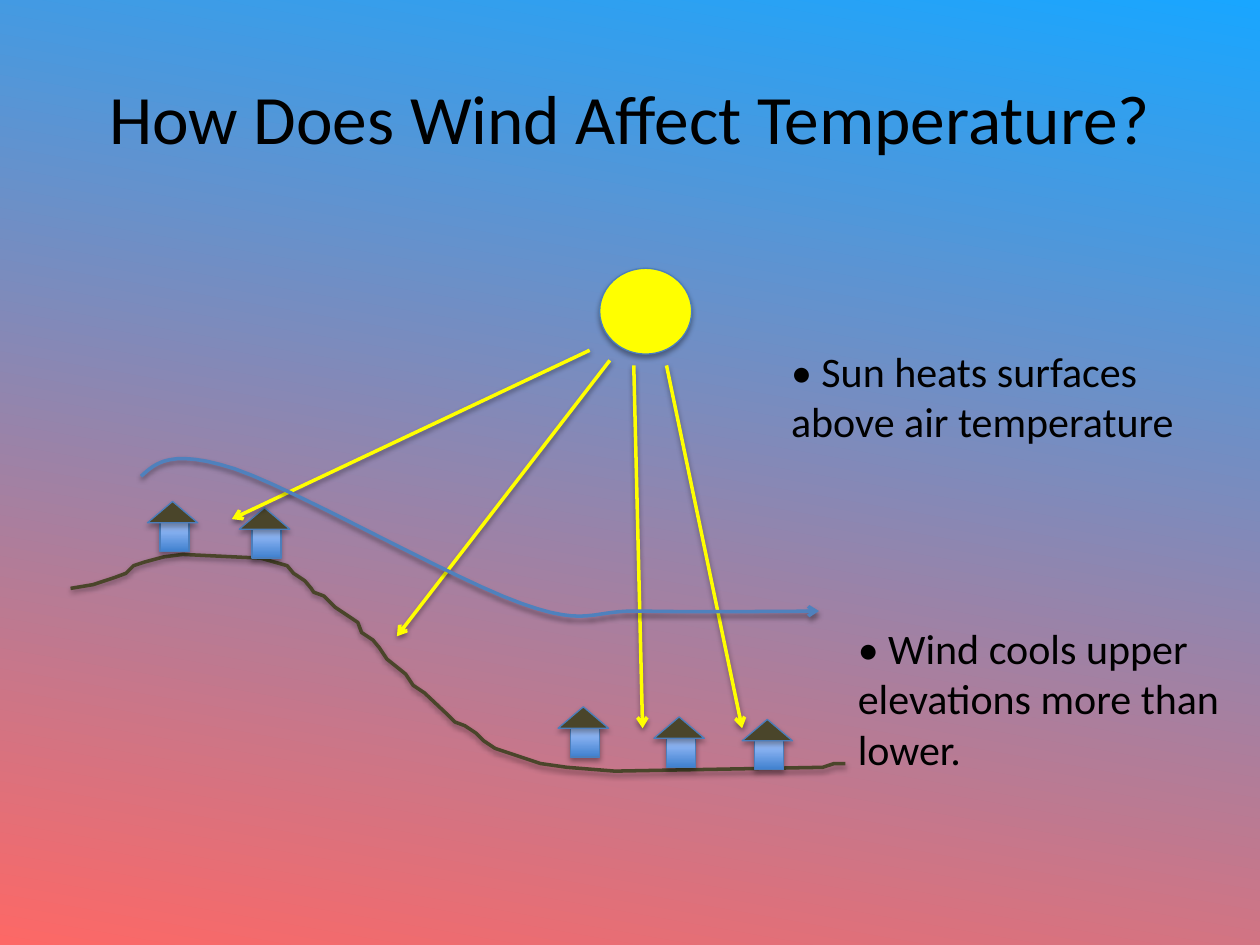
from lxml.etree import SubElement
from pptx import Presentation
from pptx.dml.color import RGBColor
from pptx.enum.shapes import MSO_CONNECTOR, MSO_SHAPE
from pptx.enum.text import MSO_ANCHOR, PP_ALIGN
from pptx.oxml.ns import qn
from pptx.util import Inches, Pt

COLS, ROWS = 100, 75
WIDE, HIGH = Inches(10), Inches(7.5)
INK = {"sky": "19A6FF", "warm": "FD6866", "sun": "FFFF00", "earth": "4A452A",
       "wind": "4F81BD", "edge": "4B7EBC", "low": "3F80CE", "high": "A4C4FF",
       "text": "000000"}
HOUSES = [(11.7, 39.8), (19, 40.3), (44.3, 56.1), (51.9, 56.9), (58.9, 57.1)]
RAYS = [((46.8, 27.8), (18.4, 41.2)), ((48.4, 28.6), (31.5, 50.5)),
        ((50.3, 29), (51, 57.8)), ((52.9, 29), (58.9, 57.8))]
NOTES = [("• Sun heats surfaces above air temperature", (61.8, 26.9, 32.9, 9.1)),
         ("• Wind cools upper elevations more than lower.", (67.1, 48.9, 30.7, 13.1))]
HILL = [(5.6, 46.7), (7.4, 46.4), (9.2, 45.8), (10, 45.5), (10.6, 44.9), (11.5, 44.6),
        (13, 44.2), (14.5, 44), (20.7, 44.3), (22.8, 44.9), (23.3, 45.5), (24.2, 46.1),
        (24.7, 46.7), (24.9, 47), (25.7, 47.3), (26.6, 48.2), (28.4, 49.4), (28.7, 50.2),
        (29.6, 50.8), (30.1, 51.4), (30.7, 52.3), (32.2, 53.5), (32.8, 54.4), (33.7, 55),
        (35.5, 56.7), (36.1, 57.3), (36.9, 57.6), (37.8, 58.2), (38.4, 58.8), (39.3, 59.4),
        (41.1, 60), (42.9, 60.6), (45, 60.9), (48.8, 61.2), (65.3, 60.9), (66.2, 60.6),
        (67.1, 60.6)]
WIND = [(11.2, 37.8), (12.4, 36.7), (13.6, 35.6), (18.6, 37.2), (23.6, 38.9),
        (36, 46), (41.4, 47.9), (46.7, 49.8), (46.9, 48.4), (50.8, 48.5),
        (54.8, 48.6), (65, 48.5), (65, 48.5)]


def grid(*vals):
    """Turn alternating columns and rows into slide lengths."""
    return [round(v * (HIGH / ROWS if i % 2 else WIDE / COLS)) for i, v in enumerate(vals)]


def hue(name):
    """Return the named colour."""
    return RGBColor.from_string(INK[name])


def blend(fill, names, angle):
    """Give a fill a two-stop gradient."""
    fill.gradient()
    fill.gradient_angle = angle
    for stop, name in zip(fill.gradient_stops, names):
        stop.color.rgb = hue(name)


def shade(shape, dist=1.8, alpha=35):
    """Drop a soft shadow straight below a shape."""
    box = SubElement(shape._element.spPr, qn("a:effectLst"))
    drop = SubElement(box, qn("a:outerShdw"), blurRad=str(Pt(3.1)),
                      dist=str(Pt(dist)), dir="5400000", rotWithShape="0")
    tint = SubElement(drop, qn("a:srgbClr"), val=INK["text"])
    SubElement(tint, qn("a:alpha"), val=str(alpha * 1000))


def stroke(shape, name, tip=False):
    """Style a drawn line, with an arrow tip on request."""
    shape.line.color.rgb = hue(name)
    shape.line.width = Pt(2)
    if tip:
        SubElement(shape.line._get_or_add_ln(), qn("a:tailEnd"), type="arrow")
    shade(shape, 1.6, 38)


def solid(shapes, kind, box, name=None):
    """Add an edged shape, filled plain or with the wall gradient."""
    shape = shapes.add_shape(kind, *grid(*box))
    if name:
        shape.fill.solid()
        shape.fill.fore_color.rgb = hue(name)
    else:
        blend(shape.fill, ("low", "high"), 90)
    shape.line.color.rgb = hue("edge")
    shape.line.width = Pt(0.75)
    shade(shape)


def house(shapes, left, top):
    """Group a wall and a roof."""
    parts = shapes.add_group_shape().shapes
    solid(parts, MSO_SHAPE.RECTANGLE, (left + 1, top + 1.7, 2.3, 2.3))
    solid(parts, MSO_SHAPE.ISOSCELES_TRIANGLE, (left, top, 4, 1.7), "earth")


def ray(shapes, start, end):
    """Add a sunbeam arrow."""
    line = shapes.add_connector(MSO_CONNECTOR.STRAIGHT, *grid(*start, *end))
    stroke(line, "sun", True)


def curve(knots, steps=12):
    """Sample a chain of cubic curves."""
    dots = [knots[0]]
    for i in range(0, len(knots) - 1, 3):
        for n in range(1, steps + 1):
            t = n / steps
            parts = ((1 - t) ** 3, 3 * t * (1 - t) ** 2, 3 * t * t * (1 - t), t ** 3)
            dots.append(tuple(sum(w * k[a] for w, k in zip(parts, knots[i:i + 4]))
                              for a in (0, 1)))
    return dots


def trace(shapes, dots, name, tip=False):
    """Draw an open outline through dots."""
    first, *rest = [grid(*dot) for dot in dots]
    pen = shapes.build_freeform(*first)
    pen.add_line_segments(rest, close=False)
    shape = pen.convert_to_shape()
    shape.fill.background()
    stroke(shape, name, tip)


def write(shapes, text, box, size, frame=None, para=None):
    """Add a wrapped text box with the given formats."""
    body = shapes.add_textbox(*grid(*box)).text_frame
    line = body.paragraphs[0]
    line.text = text
    font = {"name": "Calibri", "size": Pt(size)}
    for item, look in ((body, {"word_wrap": True, **(frame or {})}),
                       (line, para or {}), (line.runs[0].font, font)):
        for key, val in look.items():
            setattr(item, key, val)
    line.runs[0].font.color.rgb = hue("text")


def main():
    """Build and save the slide."""
    deck = Presentation()
    deck.slide_width, deck.slide_height = WIDE, HIGH
    slide = deck.slides.add_slide(deck.slide_layouts[6])
    blend(slide.background.fill, ("sky", "warm"), 260)
    shapes = slide.shapes
    write(shapes, "How Does Wind Affect Temperature?", (5, 3, 90, 12.5), 39.6,
          {"vertical_anchor": MSO_ANCHOR.MIDDLE}, {"alignment": PP_ALIGN.CENTER})
    trace(shapes, HILL, "earth")
    for spot in HOUSES:
        house(shapes, *spot)
    solid(shapes, MSO_SHAPE.OVAL, (47.6, 21.3, 7.3, 6.8), "sun")
    for ends in RAYS:
        ray(shapes, *ends)
    trace(shapes, curve(WIND), "wind", True)
    for text, box in NOTES:
        write(shapes, text, box, 24)
    deck.save("out.pptx")


if __name__ == "__main__":
    main()
